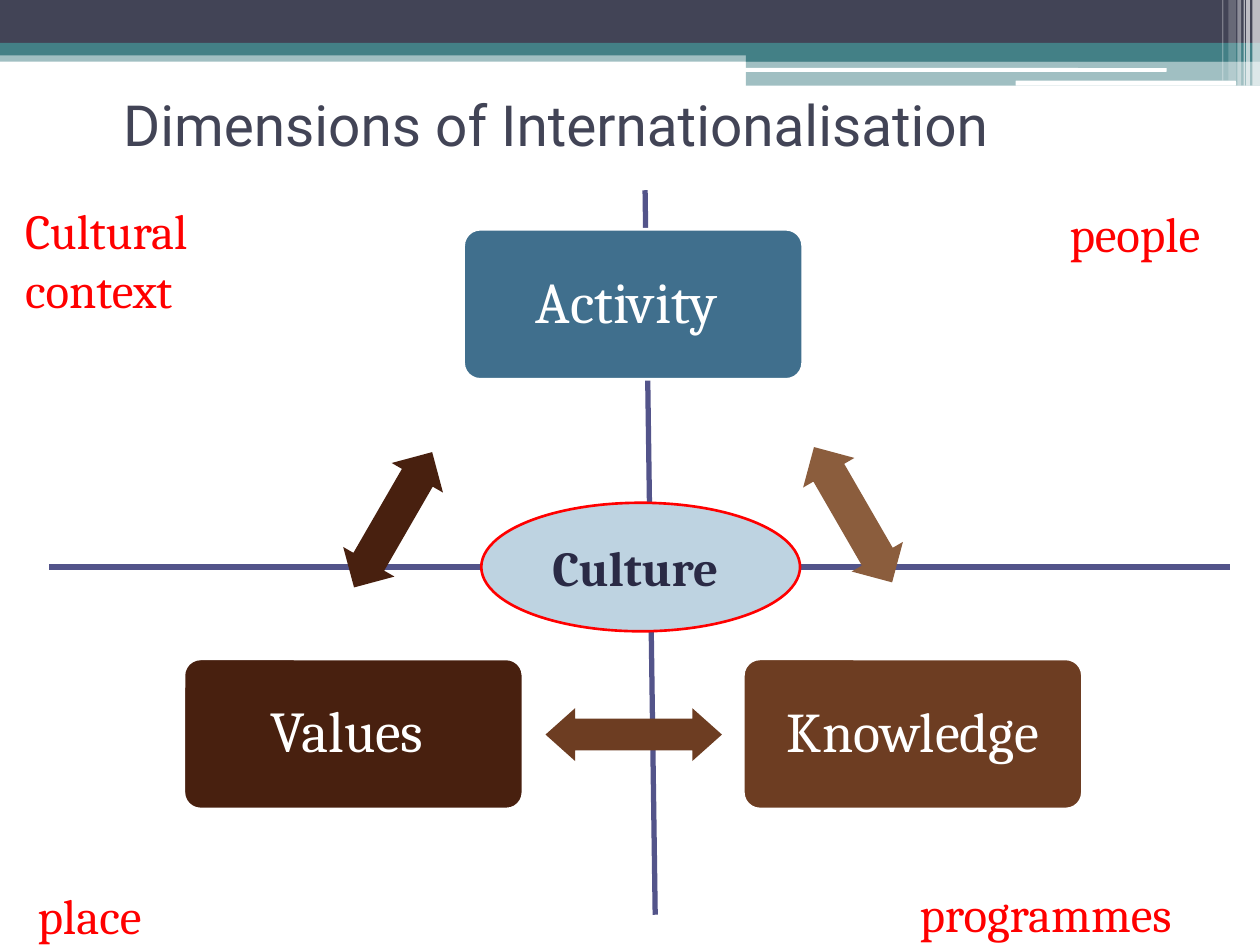
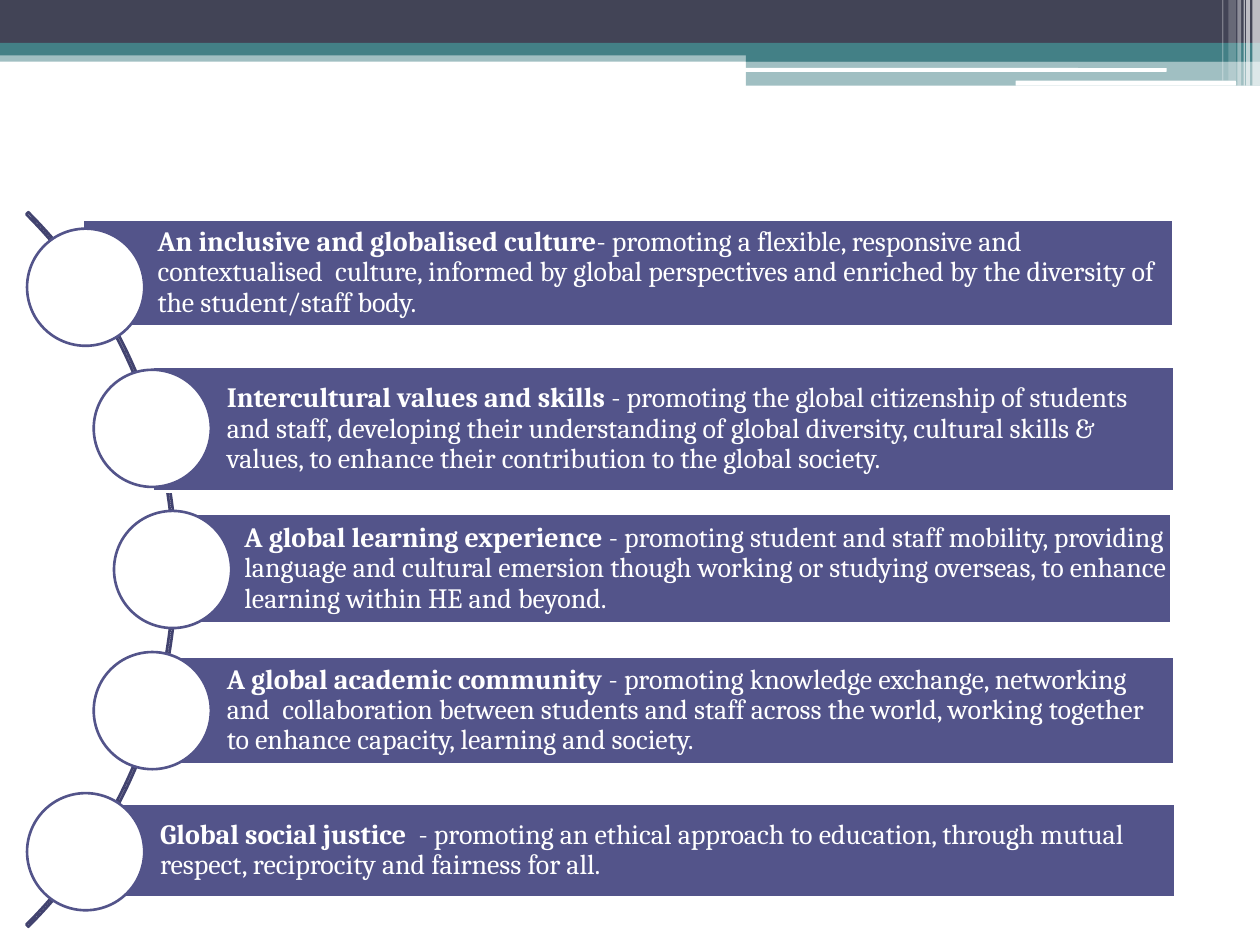
from dataclasses import dataclass
from math import sqrt

from lxml.etree import SubElement
from pptx import Presentation
from pptx.dml.color import RGBColor
from pptx.enum.shapes import MSO_CONNECTOR, MSO_SHAPE
from pptx.enum.text import MSO_ANCHOR, MSO_AUTO_SIZE, PP_ALIGN
from pptx.oxml.ns import qn
from pptx.util import Inches, Pt


@dataclass(frozen=True)
class Theme:
    slate: str = "424456"
    teal: str = "438086"
    white: str = "FFFFFF"
    indigo: str = "53548A"
    arc: str = "42436F"
    red: str = "FF0000"
    blue: str = "406F8D"
    dark_brown: str = "48200F"
    brown: str = "6D3D22"
    tan: str = "8B5D3D"
    pale_blue: str = "BED3E1"
    navy: str = "2A2A45"
    heading_font: str = "Roboto"
    body_font: str = "Cambria"
    title_size: float = 32.4
    card_size: float = 33
    label_size: float = 28
    bar_size: float = 16
    outline: float = 1.5
    axis: float = 3


def rgb(value):
    return RGBColor.from_string(value)


def write(tf, text, *, size, color, font, lead="", bold=False, align=PP_ALIGN.LEFT,
          anchor=MSO_ANCHOR.TOP, spacing=None, insets=(0.1, 0.05, 0.1, 0.05)):
    """Fill a text frame with one paragraph, opened by an optional bold lead."""
    tf.word_wrap = True
    tf.vertical_anchor = anchor
    tf.margin_left, tf.margin_top, tf.margin_right, tf.margin_bottom = map(Inches, insets)
    p = tf.paragraphs[0]
    p.alignment = align
    if spacing:
        p.line_spacing = spacing
    for content, is_bold in ((lead, True), (text, bold)):
        if content:
            r = p.add_run()
            r.text = content
            r.font.name, r.font.size, r.font.bold = font, Pt(size), is_bold
            r.font.color.rgb = rgb(color)


class Deck:
    def __init__(self, theme):
        self.theme = theme
        self.prs = Presentation()
        self.prs.slide_width, self.prs.slide_height = Inches(10), Inches(7.5)
        self.s = None

    def new_slide(self):
        self.s = self.prs.slides.add_slide(self.prs.slide_layouts[6])
        self.header()

    def shape(self, kind, box, fill=None, line=None, opacity=100, adjust=(), rotation=0):
        sp = self.s.shapes.add_shape(kind, *map(Inches, box))
        sp.shadow.inherit = False
        sp.rotation = rotation
        for i, value in enumerate(adjust):
            sp.adjustments[i] = value
        if fill:
            sp.fill.solid()
            sp.fill.fore_color.rgb = rgb(fill)
            if opacity < 100:
                color = sp.fill._xPr.find(qn("a:solidFill"))[0]
                SubElement(color, qn("a:alpha"), val=str(opacity * 1000))
        else:
            sp.fill.background()
        if line:
            sp.line.color.rgb = rgb(line)
            sp.line.width = Pt(self.theme.outline)
        else:
            sp.line.fill.background()
        return sp

    def header(self):
        t = self.theme
        bands = [
            (0, 0.4, 10, 0.09, t.teal, 50),
            (0, 0, 10, 0.34, t.slate, 100),
            (0, 0.34, 10, 0.1, t.teal, 100),
            (5.92, 0.39, 4.08, 0.1, t.teal, 100),
            (5.92, 0.48, 4.08, 0.2, t.teal, 50),
        ]
        for *box, color, opacity in bands:
            self.shape(MSO_SHAPE.RECTANGLE, box, color, opacity=opacity)
        for box in ((5.91, 0.54, 3.35, 0.03), (8.06, 0.64, 1.75, 0.04)):
            self.shape(MSO_SHAPE.ROUNDED_RECTANGLE, box, t.white)
        stripes = [
            (9.94, 0.06, 0.68, 65), (9.89, 0.03, 0.68, 65), (9.87, 0.01, 0.68, 60),
            (9.82, 0.03, 0.68, 40), (9.75, 0.06, 0.64, 20), (9.7, 0.01, 0.64, 30),
        ]
        for left, width, height, opacity in stripes:
            self.shape(MSO_SHAPE.RECTANGLE, (left, 0, width, height), t.white, opacity=opacity)

    def axis(self, start, end):
        cx = self.s.shapes.add_connector(MSO_CONNECTOR.STRAIGHT, *map(Inches, (*start, *end)))
        cx.line.color.rgb = rgb(self.theme.indigo)
        cx.line.width = Pt(self.theme.axis)
        SubElement(cx._element.spPr, qn("a:effectLst"))

    def title(self, text):
        t = self.theme
        tf = self.s.shapes.add_textbox(*map(Inches, (0.88, 0.6, 7.56, 0.77))).text_frame
        write(tf, text, size=t.title_size, color=t.slate, font=t.heading_font,
              anchor=MSO_ANCHOR.MIDDLE)

    def label(self, text, box):
        t = self.theme
        tf = self.s.shapes.add_textbox(*map(Inches, box)).text_frame
        write(tf, text, size=t.label_size, color=t.red, font=t.body_font)
        tf.auto_size = MSO_AUTO_SIZE.SHAPE_TO_FIT_TEXT

    def card(self, text, left, top, fill, size):
        t = self.theme
        sp = self.shape(MSO_SHAPE.ROUNDED_RECTANGLE, (left, top, 2.69, 1.19), fill, t.white,
                        adjust=(0.11,))
        write(sp.text_frame, text, size=size, color=t.white, font=t.body_font,
              align=PP_ALIGN.CENTER, anchor=MSO_ANCHOR.MIDDLE, spacing=0.9, insets=(0.17,) * 4)

    def double_arrow(self, box, fill, rotation=0):
        head = 0.235
        self.shape(MSO_SHAPE.LEFT_RIGHT_ARROW, box, fill, adjust=(0.6, head / box[3]),
                   rotation=rotation)

    def oval(self, text, box):
        t = self.theme
        sp = self.shape(MSO_SHAPE.OVAL, box, t.pale_blue, t.red)
        write(sp.text_frame, text, size=t.label_size, color=t.navy, font=t.body_font, bold=True,
              align=PP_ALIGN.CENTER, anchor=MSO_ANCHOR.MIDDLE)

    def bar(self, lead, text, box):
        t = self.theme
        sp = self.shape(MSO_SHAPE.RECTANGLE, box, t.indigo, t.white)
        write(sp.text_frame, text, lead=lead, size=t.bar_size, color=t.white, font=t.body_font,
              anchor=MSO_ANCHOR.MIDDLE, spacing=0.9, insets=(0.59, 0.04, 0.04, 0.04))

    def dot(self, center_x, center_y, diameter=0.93):
        box = (center_x - diameter / 2, center_y - diameter / 2, diameter, diameter)
        self.shape(MSO_SHAPE.OVAL, box, self.theme.white, self.theme.indigo)


def dimensions_slide(deck):
    t = deck.theme
    deck.new_slide()
    deck.axis((0.39, 4.5), (9.76, 4.5))
    deck.axis((5.12, 1.51), (5.2, 7.26))
    deck.double_arrow((6.15, 3.85, 1.24, 0.47), t.tan, rotation=60)
    deck.card("Knowledge", 5.9, 5.23, t.brown, 32)
    deck.double_arrow((4.33, 5.62, 1.4, 0.42), t.brown)
    deck.card("Values ", 1.46, 5.23, t.dark_brown, t.card_size)
    deck.double_arrow((2.5, 3.89, 1.24, 0.47), t.dark_brown, rotation=300)
    deck.card("Activity ", 3.68, 1.82, t.blue, t.card_size)
    deck.title("Dimensions of Internationalisation")
    deck.label("Cultural context", (0.1, 1.54, 2.19, 1.04))
    deck.label("people", (8.39, 1.57, 1.5, 0.57))
    deck.label("place", (0.2, 6.98, 2.09, 0.57))
    deck.oval("Culture ", (3.82, 3.99, 2.53, 1.02))
    deck.label("programmes", (7.2, 6.96, 3.05, 0.57))


def aims_slide(deck):
    aims = [
        ("An inclusive and globalised culture",
         "- promoting a flexible, responsive and contextualised  culture, informed by global "
         "perspectives and enriched by the diversity of the student/staff body.",
         (0.66, 1.74, 8.65, 0.85)),
        ("Intercultural values and skills ",
         "- promoting the global citizenship of students and staff, developing their "
         "understanding of global diversity, cultural skills & values, to enhance their "
         "contribution to the global society.",
         (1.21, 2.91, 8.11, 0.99)),
        ("A global learning experience ",
         "- promoting student and staff mobility, providing language and cultural emersion "
         "though working or studying overseas, to enhance learning within HE and beyond.",
         (1.35, 4.08, 7.95, 0.87)),
        ("A global academic community ",
         "- promoting knowledge exchange, networking and  collaboration between students and "
         "staff across the world, working together to enhance capacity, learning and society.",
         (1.21, 5.21, 8.11, 0.86)),
        ("Global social justice  ",
         "- promoting an ethical approach to education, through mutual respect, reciprocity "
         "and fairness for all.",
         (0.68, 6.38, 8.65, 0.74)),
    ]
    center_x, center_y, radius, pitch = -2.61, 4.52, 3.98, 1.12
    deck.new_slide()
    deck.shape(MSO_SHAPE.BLOCK_ARC, (-6.62, 0.51, 8.02, 8.02), line=deck.theme.arc,
               adjust=(189, 27, 0.003))
    for i, (lead, text, box) in enumerate(aims):
        deck.bar(lead, text, box)
        dy = (i - len(aims) // 2) * pitch
        deck.dot(center_x + sqrt(radius ** 2 - dy ** 2), center_y + dy)


def main():
    deck = Deck(Theme())
    dimensions_slide(deck)
    aims_slide(deck)
    deck.prs.save("out.pptx")


if __name__ == "__main__":
    main()
